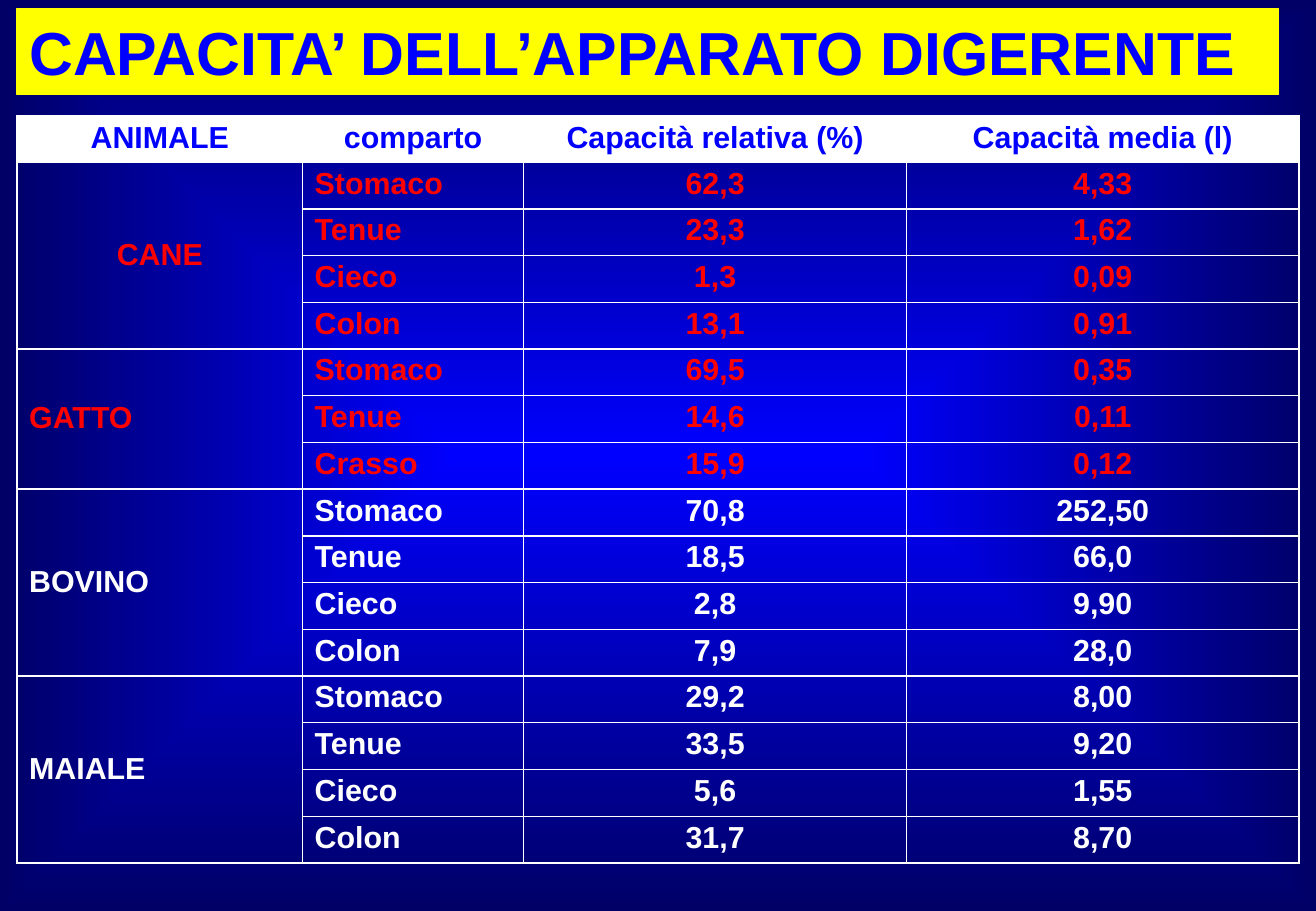
from lxml import etree
from pptx import Presentation
from pptx.dml.color import RGBColor
from pptx.enum.text import MSO_ANCHOR, MSO_AUTO_SIZE, PP_ALIGN
from pptx.oxml.ns import qn
from pptx.util import Inches, Pt

TITLE = "CAPACITA’ DELL’APPARATO DIGERENTE"
HEADERS = ["ANIMALE", "comparto", "Capacità relativa (%)", "Capacità media (l)"]

BLUE = RGBColor(0x00, 0x00, 0xFF)
NAVY = RGBColor(0x00, 0x00, 0x66)
YELLOW = RGBColor(0xFF, 0xFF, 0x00)
RED = RGBColor(0xFF, 0x00, 0x00)
WHITE = RGBColor(0xFF, 0xFF, 0xFF)

LEFT, CENTER = PP_ALIGN.LEFT, PP_ALIGN.CENTER
TOP, MIDDLE = MSO_ANCHOR.TOP, MSO_ANCHOR.MIDDLE

ANIMALS = [
    ("CANE", RED, CENTER, [
        ("Stomaco", "62,3", "4,33"),
        ("Tenue", "23,3", "1,62"),
        ("Cieco", "1,3", "0,09"),
        ("Colon", "13,1", "0,91"),
    ]),
    ("GATTO", RED, LEFT, [
        ("Stomaco", "69,5", "0,35"),
        ("Tenue", "14,6", "0,11"),
        ("Crasso", "15,9", "0,12"),
    ]),
    ("BOVINO", WHITE, LEFT, [
        ("Stomaco", "70,8", "252,50"),
        ("Tenue", "18,5", "66,0"),
        ("Cieco", "2,8", "9,90"),
        ("Colon", "7,9", "28,0"),
    ]),
    ("MAIALE", WHITE, LEFT, [
        ("Stomaco", "29,2", "8,00"),
        ("Tenue", "33,5", "9,20"),
        ("Cieco", "5,6", "1,55"),
        ("Colon", "31,7", "8,70"),
    ]),
]
COLUMN_WIDTHS = [2.35, 1.82, 3.15, 3.23]
TABLE_HEIGHT = 6.16
MARGIN = 0.14


def style_font(paragraph, size, color):
    font = paragraph.font
    font.name, font.size, font.bold = "Arial", Pt(size), True
    font.color.rgb = color


def write_cell(cell, text, color, align, anchor):
    cell.vertical_anchor = anchor
    paragraph = cell.text_frame.paragraphs[0]
    paragraph.text = text
    paragraph.alignment = align
    paragraph.line_spacing = 0.95
    style_font(paragraph, 18, color)


def add_borders(cell):
    properties = cell._tc.get_or_add_tcPr()
    for side in ("a:lnL", "a:lnR", "a:lnT", "a:lnB"):
        line = etree.SubElement(properties, qn(side), w=str(Pt(1)))
        fill = etree.SubElement(line, qn("a:solidFill"))
        etree.SubElement(fill, qn("a:srgbClr"), val=str(WHITE))


def paint_background(slide):
    """Gradient spreading from a blue centre to navy edges."""
    fill = slide.background.fill
    fill.gradient()
    for stop, color in zip(fill.gradient_stops, (BLUE, NAVY)):
        stop.color.rgb = color
    for stop, position in zip(fill.gradient_stops, (0, 1)):
        stop.position = position
    linear = next(slide.element.iter(qn("a:lin")))
    gradient = linear.getparent()
    gradient.remove(linear)
    shape_path = etree.SubElement(gradient, qn("a:path"), path="shape")
    etree.SubElement(shape_path, qn("a:fillToRect"),
                     {side: "50000" for side in "ltrb"})


def add_title(slide):
    title = slide.shapes.title
    title.left, title.top = Inches(MARGIN), Inches(0.07)
    title.width, title.height = Inches(10.38), Inches(0.71)
    title.fill.solid()
    title.fill.fore_color.rgb = YELLOW
    title.line.color.rgb = YELLOW
    title.line.width = Pt(0.75)
    frame = title.text_frame
    frame.text = TITLE
    frame.word_wrap = False
    frame.auto_size = MSO_AUTO_SIZE.NONE
    frame.vertical_anchor = MIDDLE
    frame.paragraphs[0].alignment = LEFT
    style_font(frame.paragraphs[0], 36, BLUE)


def add_capacity_table(slide):
    row_count = 1 + sum(len(parts) for *_, parts in ANIMALS)
    table = slide.shapes.add_table(
        row_count, len(HEADERS), Inches(MARGIN), Inches(0.95),
        Inches(sum(COLUMN_WIDTHS)), Inches(TABLE_HEIGHT)).table
    table.horz_banding = False
    for column, width in zip(table.columns, COLUMN_WIDTHS):
        column.width = Inches(width)
    for row in table.rows:
        row.height = Inches(TABLE_HEIGHT / row_count)
    for cell in table.iter_cells():
        add_borders(cell)
        cell.fill.background()

    for column, header in enumerate(HEADERS):
        cell = table.cell(0, column)
        cell.fill.solid()
        cell.fill.fore_color.rgb = WHITE
        write_cell(cell, header, BLUE, CENTER, MIDDLE)

    first = 1
    for animal, color, align, parts in ANIMALS:
        animal_cell = table.cell(first, 0)
        animal_cell.merge(table.cell(first + len(parts) - 1, 0))
        write_cell(animal_cell, animal, color, align, MIDDLE)
        for row, values in enumerate(parts, first):
            for column, value in enumerate(values, 1):
                write_cell(table.cell(row, column), value, color,
                           LEFT if column == 1 else CENTER, TOP)
        first += len(parts)


def main():
    presentation = Presentation()
    presentation.slide_width = Inches(10.83)
    presentation.slide_height = Inches(7.5)
    title_only = presentation.slide_layouts[5]
    slide = presentation.slides.add_slide(title_only)
    paint_background(slide)
    add_title(slide)
    add_capacity_table(slide)
    presentation.save("out.pptx")


if __name__ == "__main__":
    main()
